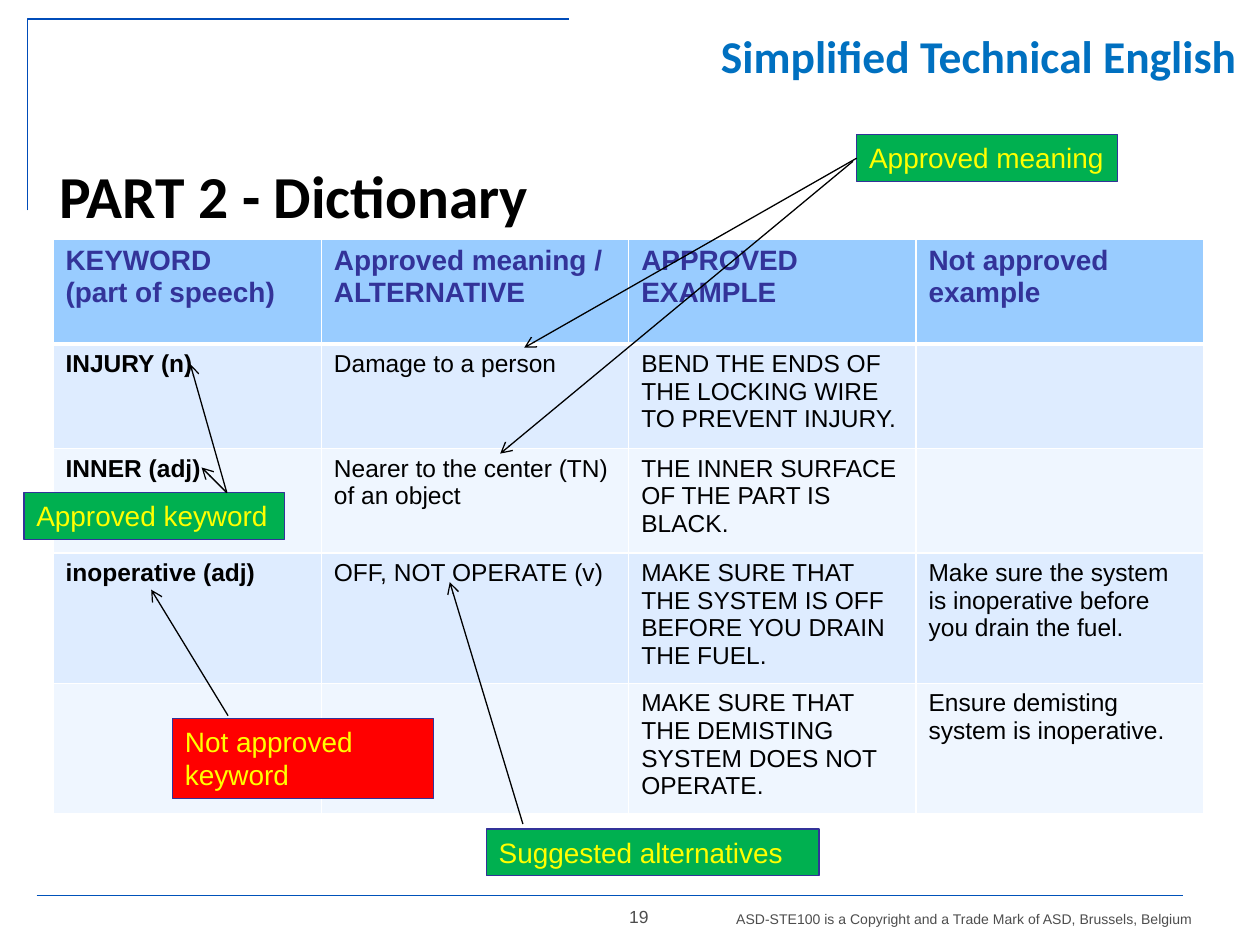
from collections import namedtuple
from dataclasses import dataclass
from lxml.etree import SubElement
from pptx import Presentation
from pptx.dml.color import RGBColor
from pptx.enum.shapes import MSO_CONNECTOR, MSO_SHAPE
from pptx.enum.text import MSO_ANCHOR, MSO_AUTO_SIZE, PP_ALIGN
from pptx.oxml.ns import qn
from pptx.util import Inches, Pt

Box = namedtuple("Box", "left top width height")


@dataclass(frozen=True)
class Theme:
    body: str = "Arial"
    head: str = "Calibri"
    black: str = "000000"
    white: str = "FFFFFF"
    gray: str = "4D4D4D"
    brand: str = "0070C0"
    rule: str = "0052BA"
    frame: str = "004CB9"
    navy: str = "333399"
    yellow: str = "FFFF00"
    green: str = "00B050"
    red: str = "FF0000"
    header: str = "99CCFF"
    bands: tuple = ("DEECFF", "EFF6FF")
    title: int = 34
    banner: int = 26
    label: int = 16
    cell: int = 14
    page: int = 10
    note: int = 8
    thin: float = 0.75


THEME = Theme()

ROWS = [
    ["KEYWORD\n(part of speech)", "Approved meaning / ALTERNATIVE",
     "APPROVED EXAMPLE", "Not approved example"],
    ["INJURY (n)", "Damage to a person",
     "BEND THE ENDS OF THE LOCKING WIRE TO PREVENT INJURY.", ""],
    ["INNER (adj)", "Nearer to the center (TN) of an object",
     "THE INNER SURFACE OF THE PART IS BLACK.", ""],
    ["inoperative (adj)", "OFF, NOT OPERATE (v)",
     "MAKE SURE THAT THE SYSTEM IS OFF BEFORE YOU DRAIN THE FUEL.",
     "Make sure the system is inoperative before you drain the fuel."],
    ["", "", "MAKE SURE THAT THE DEMISTING SYSTEM DOES NOT OPERATE.",
     "Ensure demisting system is inoperative."],
]
WIDTHS = [2.13, 2.44, 2.28, 2.28]
HEIGHTS = [0.83, 0.83, 0.83, 1.03, 1.03]


def rgb(code):
    return RGBColor.from_string(code)


def inch(box):
    return [Inches(n) for n in box]


def apply(item, form):
    for key, value in form.items():
        setattr(item, key, value)


def write(frame, text, name, size, color, bold=False, **form):
    frame.text = text
    for para in frame.paragraphs:
        apply(para, form)
        apply(para.font, {"name": name, "size": Pt(size), "bold": bold})
        para.font.color.rgb = rgb(color)


def label(slide, box, *style, **form):
    shape = slide.shapes.add_textbox(*inch(box))
    shape.text_frame.word_wrap = True
    write(shape.text_frame, *style, **form)
    return shape


def stroke(line, color, width=THEME.thin):
    line.color.rgb = rgb(color)
    line.width = Pt(width)


def link(slide, start, end, color):
    line = slide.shapes.add_connector(
        MSO_CONNECTOR.STRAIGHT, *inch(start), *inch(end))
    stroke(line.line, color)
    SubElement(line._element.spPr, qn("a:effectLst"))
    return line


def arrow(slide, start, end):
    line = link(slide, start, end, THEME.black)
    SubElement(line.line._get_or_add_ln(), qn("a:tailEnd"), type="arrow")
    return line


def corner(slide, box):
    left, top, width, height = inch(box)
    pen = slide.shapes.build_freeform(left, top + height)
    pen.add_line_segments([(left, top), (left + width, top)], close=False)
    shape = pen.convert_to_shape()
    shape.shadow.inherit = False
    shape.fill.background()
    stroke(shape.line, THEME.frame)


def banner(slide, box):
    shape = label(slide, box, "Simplified Technical English", THEME.head,
                  THEME.banner, THEME.brand, True,
                  alignment=PP_ALIGN.RIGHT, line_spacing=0.8)
    apply(shape.text_frame, {
        "margin_left": 0, "margin_right": 0,
        "margin_top": Inches(0.04), "margin_bottom": Inches(0.04)})


def title(slide, box):
    shape = slide.shapes.title
    apply(shape, dict(zip(box._fields, inch(box))))
    apply(shape.text_frame, {
        "word_wrap": True, "auto_size": MSO_AUTO_SIZE.NONE,
        "vertical_anchor": MSO_ANCHOR.TOP})
    write(shape.text_frame, "PART 2 - Dictionary", THEME.head, THEME.title,
          THEME.black, True, alignment=PP_ALIGN.LEFT, line_spacing=0.8)


def border(cell, foot):
    props = cell._tc.get_or_add_tcPr()
    for side, width in (("L", 1), ("R", 1), ("T", 1), ("B", foot)):
        edge = SubElement(props, qn(f"a:ln{side}"), w=str(Pt(width)))
        fill = SubElement(edge, qn("a:solidFill"))
        SubElement(fill, qn("a:srgbClr"), val=THEME.white)


def grid(slide, box):
    table = slide.shapes.add_table(len(ROWS), len(WIDTHS), *inch(box)).table
    for col, width in zip(table.columns, WIDTHS):
        col.width = Inches(width)
    for r, texts in enumerate(ROWS):
        table.rows[r].height = Inches(HEIGHTS[r])
        top = r == 0
        size, color = ((THEME.label, THEME.navy) if top
                       else (THEME.cell, THEME.black))
        for c, text in enumerate(texts):
            cell = table.cell(r, c)
            border(cell, 3 if top else 1)
            cell.fill.solid()
            cell.fill.fore_color.rgb = rgb(
                THEME.header if top else THEME.bands[(r - 1) % 2])
            write(cell.text_frame, text, THEME.body, size, color,
                  top or c == 0)


def tag(slide, box, text, color):
    shape = slide.shapes.add_shape(MSO_SHAPE.RECTANGLE, *inch(box))
    shape.shadow.inherit = False
    shape.fill.solid()
    shape.fill.fore_color.rgb = rgb(color)
    stroke(shape.line, THEME.navy)
    apply(shape.text_frame, {
        "word_wrap": True, "vertical_anchor": MSO_ANCHOR.TOP})
    write(shape.text_frame, text, THEME.body, THEME.label, THEME.yellow,
          alignment=PP_ALIGN.LEFT)
    return shape


def footer(slide, box):
    left, top, width, height = box
    link(slide, (left, top), (left + width, top), THEME.rule)
    page = label(slide, Box(left + 4.58, top + 0.03, 0.4, 0.27), "19",
                 THEME.body, THEME.page, THEME.gray,
                 alignment=PP_ALIGN.CENTER)
    page.text_frame.word_wrap = False
    label(slide, Box(left + 5.09, top + 0.07, 4.55, 0.24),
          "ASD-STE100 is a Copyright and a Trade Mark of ASD, "
          "Brussels, Belgium", THEME.body, THEME.note, THEME.gray,
          alignment=PP_ALIGN.CENTER)


def notes(slide):
    tag(slide, Box(1.37, 5.7, 2.07, 0.64), "Not approved keyword", THEME.red)
    tag(slide, Box(0.19, 3.91, 2.07, 0.37), "Approved keyword", THEME.green)
    sense = tag(slide, Box(6.8, 1.07, 2.07, 0.37), "Approved meaning",
                THEME.green)
    tag(slide, Box(3.86, 6.58, 2.64, 0.37), "Suggested alternatives",
        THEME.green)
    arrow(slide, (6.8, 1.25), (4.16, 2.76)).begin_connect(sense, 1)
    for start, end in [
        ((6.77, 1.28), (3.97, 3.6)),
        ((1.8, 3.91), (1.51, 2.89)),
        ((1.8, 3.91), (1.6, 3.71)),
        ((1.81, 5.68), (1.2, 4.68)),
        ((4.15, 6.54), (3.57, 4.62)),
    ]:
        arrow(slide, start, end)


def main():
    deck = Presentation()
    apply(deck, {"slide_width": Inches(10), "slide_height": Inches(7.5)})
    slide = deck.slides.add_slide(deck.slide_layouts[5])
    footer(slide, Box(0.29, 7.11, 9.1, 0.31))
    corner(slide, Box(0.22, 0.15, 4.3, 1.52))
    title(slide, Box(0.37, 1.32, 9.14, 0.57))
    banner(slide, Box(4.68, 0.27, 5.14, 0.44))
    grid(slide, Box(0.42, 1.9, sum(WIDTHS), sum(HEIGHTS)))
    notes(slide)
    deck.save("out.pptx")


if __name__ == "__main__":
    main()
